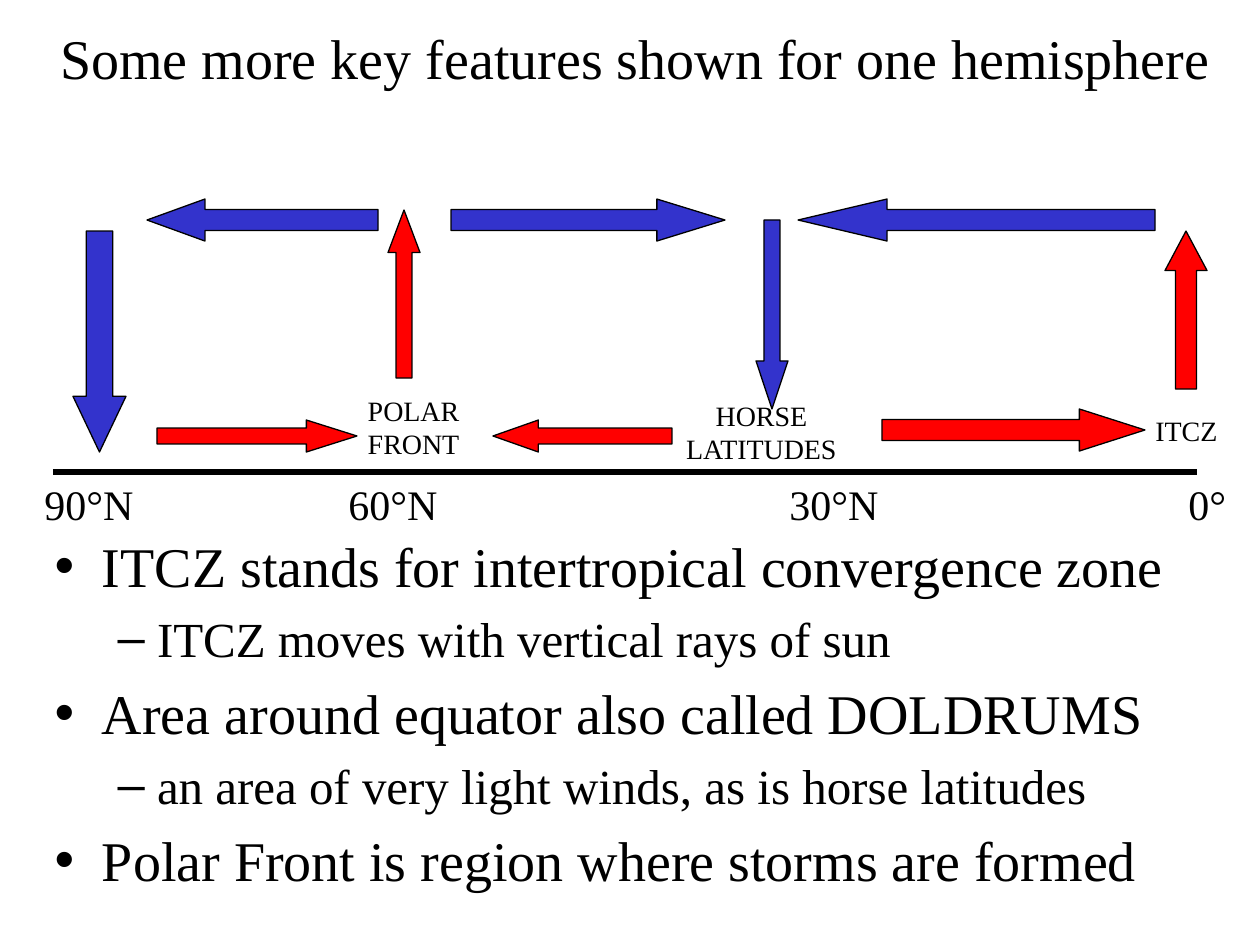
from pptx import Presentation, util as u
from pptx.dml.color import RGBColor
from pptx.enum import shapes, text
from pptx.oxml.ns import qn
from lxml import etree

FONT, BLACK, BLUE, RED = "Times New Roman", "000000", "3333CC", "FF0000"
KIND = shapes.MSO_SHAPE
UP, DOWN = KIND.UP_ARROW, KIND.DOWN_ARROW
LEFT, RIGHT = KIND.LEFT_ARROW, KIND.RIGHT_ARROW

TITLE = "Some more key features shown for one hemisphere"
POINTS = [
    (0, "ITCZ stands for intertropical convergence zone"),
    (1, "ITCZ moves with vertical rays of sun"),
    (0, "Area around equator also called DOLDRUMS"),
    (1, "an area of very light winds, as is horse latitudes"),
    (0, "Polar Front is region where storms are formed"),
]
SIZES = [32, 28]
GROUND = (53, 472, 1197)
DEGREES = [("90°N", 32, 115), ("60°N", 336, 115), ("30°N", 777, 115), ("0°", 1176, 63)]
ZONES = [
    (["POLAR", "FRONT"], (355, 387, 117, 81)),
    (["HORSE", "LATITUDES"], (672, 392, 179, 81)),
    (["ITCZ"], (1143, 407, 87, 47)),
]
ARROWS = [
    (DOWN, BLUE, (73, 231, 53, 221), 1.05),
    (DOWN, BLUE, (756, 220, 32, 189), 1.5),
    (UP, RED, (1165, 231, 42, 158), 0.94),
    (UP, RED, (388, 210, 32, 168), 1.33),
    (LEFT, BLUE, (798, 199, 357, 42), 2.12),
    (RIGHT, BLUE, (451, 199, 274, 42), 1.62),
    (LEFT, BLUE, (147, 199, 231, 42), 1.38),
    (RIGHT, RED, (157, 420, 200, 32), 1.58),
    (LEFT, RED, (493, 420, 179, 32), 1.42),
    (RIGHT, RED, (882, 409, 263, 42), 1.56),
]


def px(n):
    return round(n * 914400 / 126)


def color(code):
    return RGBColor.from_string(code)


def style(para, size):
    para.font.name = FONT
    para.font.size = u.Pt(size)
    para.font.color.rgb = color(BLACK)


def place(shape, box):
    shape.left, shape.top, shape.width, shape.height = map(px, box)


def label(slide, lines, box, size, align):
    frame = slide.shapes.add_textbox(*map(px, box)).text_frame
    frame.word_wrap = False
    frame.auto_size = text.MSO_AUTO_SIZE.SHAPE_TO_FIT_TEXT
    for i, line in enumerate(lines):
        para = frame.paragraphs[0] if i == 0 else frame.add_paragraph()
        para.text = line
        para.alignment = align
        style(para, size)


def arrow(slide, kind, fill, box, head):
    shape = slide.shapes.add_shape(kind, *map(px, box))
    shape.adjustments[0] = 0.5
    shape.adjustments[1] = head
    shape.shadow.inherit = False
    shape.fill.solid()
    shape.fill.fore_color.rgb = color(fill)
    shape.line.color.rgb = color(BLACK)
    shape.line.width = u.Pt(0.75)


def main():
    deck = Presentation()
    deck.slide_width, deck.slide_height = px(1260), px(945)
    slide = deck.slides.add_slide(deck.slide_layouts[1])

    title, body = slide.placeholders
    place(title, (42, 21, 1187, 73))
    title.text_frame.text = TITLE
    style(title.text_frame.paragraphs[0], 32)

    place(body, (42, 525, 1187, 378))
    frame = body.text_frame
    frame.auto_size = text.MSO_AUTO_SIZE.NONE
    for i, (level, words) in enumerate(POINTS):
        para = frame.paragraphs[0] if i == 0 else frame.add_paragraph()
        para.text = words
        para.level = level
        style(para, SIZES[level])

    start, y, end = map(px, GROUND)
    line = slide.shapes.add_connector(shapes.MSO_CONNECTOR.STRAIGHT, start, y, end, y)
    line.line.color.rgb = color(BLACK)
    line.line.width = u.Pt(3)
    etree.SubElement(line._element.spPr, qn("a:effectLst"))

    for spec in ARROWS:
        arrow(slide, *spec)
    for name, x, width in DEGREES:
        label(slide, [name], (x, 472, width, 63), 24, text.PP_ALIGN.LEFT)
    for lines, box in ZONES:
        label(slide, lines, box, 16, text.PP_ALIGN.CENTER)

    deck.save("out.pptx")


if __name__ == "__main__":
    main()
